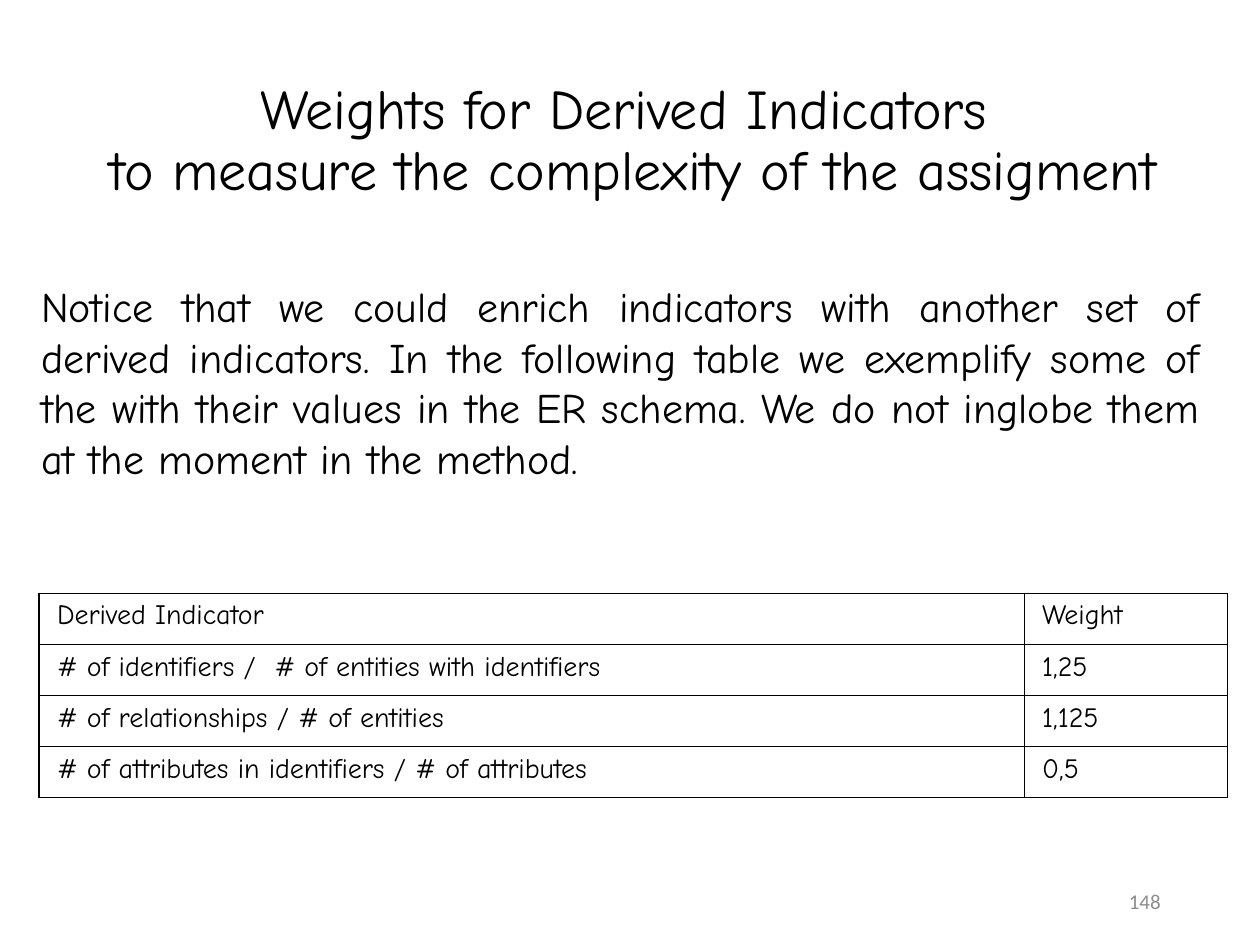
import pptx
import pptx.util
import pptx.dml.color
import pptx.enum.text
import pptx.oxml
import pptx.oxml.ns

Cm = pptx.util.Cm
Pt = pptx.util.Pt
Align = pptx.enum.text.PP_ALIGN
Anchor = pptx.enum.text.MSO_ANCHOR
BLACK = pptx.dml.color.RGBColor(0x00, 0x00, 0x00)
GREY = pptx.dml.color.RGBColor(0x8C, 0x8C, 0x8C)
COMIC = "Comic Neue"

TITLE = "Weights for Derived Indicators \vto measure the complexity of the assigment"
NOTICE = (
    "Notice that we could enrich indicators with another set of derived "
    "indicators. In the following table we exemplify some of the with their "
    "values in the ER schema. We do not inglobe them at the moment in the method."
)
NUMBER = "148"
ROWS = [
    ("Derived Indicator", "Weight"),
    ("# of identifiers /  # of entities with identifiers", "1,25"),
    ("# of relationships / # of entities", "1,125"),
    ("# of attributes in identifiers / # of attributes", "0,5"),
]
WIDTHS = [Cm(19.86), Cm(4.09)]
HEIGHT = Cm(1.03)


def write(frame, text, size, align, name=COMIC, color=BLACK):
    frame.word_wrap = True
    para = frame.paragraphs[0]
    para.text = text
    para.alignment = align
    para.font.size = Pt(size)
    para.font.name = name
    para.font.color.rgb = color
    return para


def border(cell):
    props = cell._tc.get_or_add_tcPr()
    for at, side in enumerate(("lnL", "lnR", "lnT", "lnB")):
        props.insert(at, pptx.oxml.parse_xml(
            f'<a:{side} {pptx.oxml.ns.nsdecls("a")} w="{Pt(1)}"><a:solidFill>'
            f'<a:srgbClr val="{BLACK}"/></a:solidFill></a:{side}>'))


def main():
    deck = pptx.Presentation()
    deck.slide_width, deck.slide_height = Cm(25.4), Cm(19.05)
    slide = deck.slides.add_slide(deck.slide_layouts.get_by_name("Title Only"))
    shapes = slide.shapes

    title = shapes.title
    title.left, title.top = Cm(0.86), Cm(1.02)
    title.width, title.height = Cm(23.83), Cm(3.68)
    title.text_frame.auto_size = pptx.enum.text.MSO_AUTO_SIZE.NONE
    title.text_frame.vertical_anchor = Anchor.MIDDLE
    write(title.text_frame, TITLE, 32, Align.CENTER).line_spacing = 0.9

    frame = shapes.add_table(
        len(ROWS), len(WIDTHS), Cm(0.79), Cm(11.96),
        sum(WIDTHS), HEIGHT * len(ROWS))
    table = frame.table
    table.first_row = table.horz_banding = False
    for col, width in zip(table.columns, WIDTHS):
        col.width = width
    for r, row in enumerate(ROWS):
        table.rows[r].height = HEIGHT
        for c, text in enumerate(row):
            cell = table.cell(r, c)
            cell.margin_left = cell.margin_right = Cm(0.36)
            cell.margin_top = cell.margin_bottom = Cm(0.13)
            cell.fill.background()
            write(cell.text_frame, text, 16, Align.LEFT)
            border(cell)

    number = shapes.add_textbox(Cm(17.93), Cm(17.65), Cm(5.72), Cm(1.02))
    number.text_frame.vertical_anchor = Anchor.MIDDLE
    write(number.text_frame, NUMBER, 12, Align.RIGHT, "Calibri", GREY)

    notice = shapes.add_textbox(Cm(0.58), Cm(5.54), Cm(23.85), Cm(4.37))
    write(notice.text_frame, NOTICE, 24, Align.JUSTIFY)

    deck.save("out.pptx")


if __name__ == "__main__":
    main()
